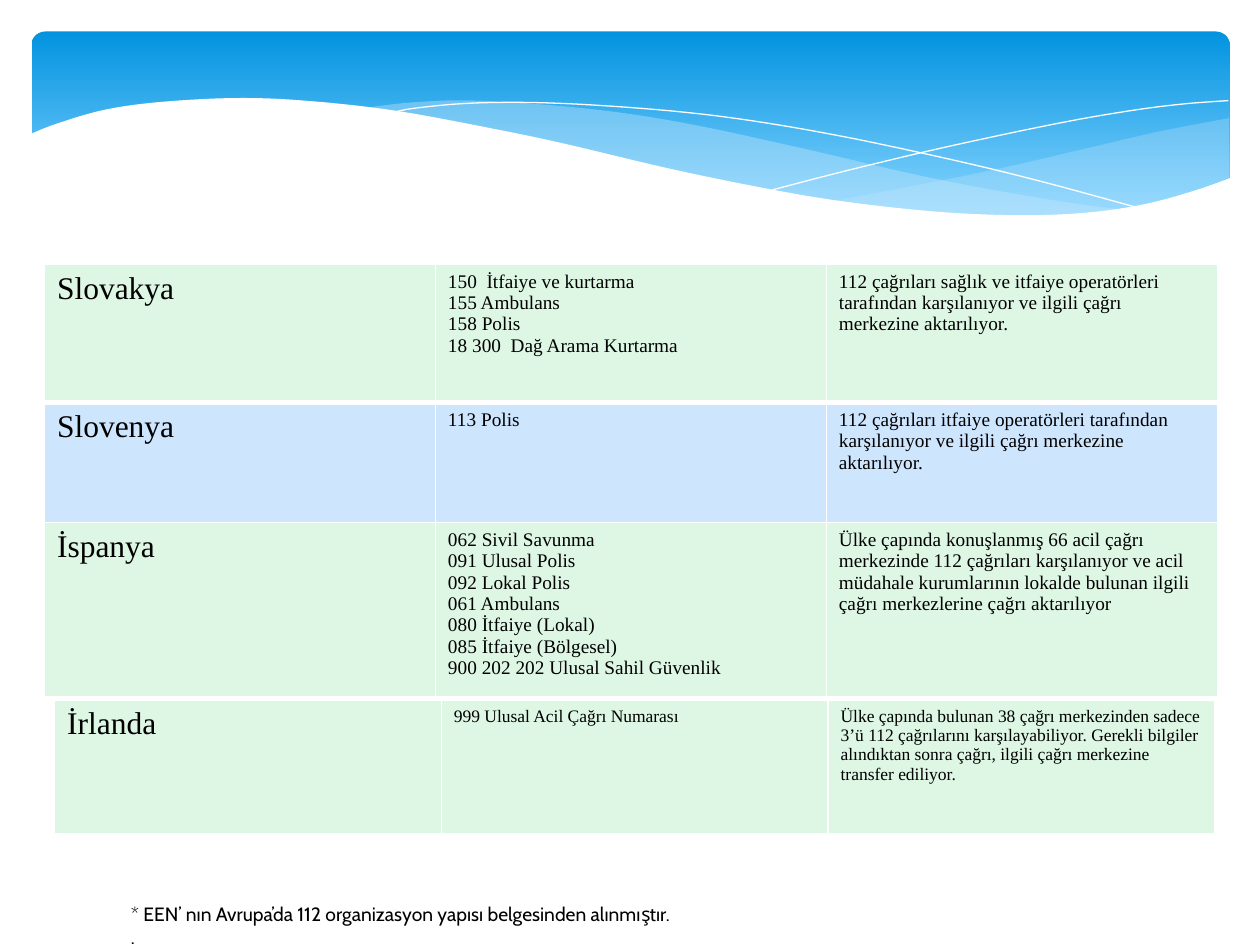
from dataclasses import dataclass
from typing import Optional

from lxml.etree import SubElement
from pptx import Presentation
from pptx.dml.color import RGBColor
from pptx.enum.shapes import MSO_SHAPE
from pptx.oxml.ns import qn
from pptx.util import Pt


@dataclass(frozen=True)
class Theme:
    sky_top: str = "0293E0"
    sky_bottom: str = "83D3FE"
    haze: str = "C6E7FC"
    white: str = "FFFFFF"
    text: str = "000000"
    green: str = "DEF6E4"
    blue: str = "CEE5FE"
    table_font: str = "Times New Roman"
    note_font: str = "Cabin"
    country_size: float = 18
    body_size: float = 11
    small_size: float = 10


@dataclass(frozen=True)
class Wave:
    edges: list[list[tuple[float, float]]]  # smooth edges, joined by straight lines
    fill: Optional[str] = None
    opacity: int = 100


@dataclass(frozen=True)
class Row:
    country: str
    numbers: list[str]
    routing: str
    height: float
    fill: str


@dataclass(frozen=True)
class CountryTable:
    left: float
    top: float
    column: float
    size: float
    rows: list[Row]


T = Theme()

# Banner waves, from back to front
WAVES = [
    Wave([[(702.5, 67.5), (663, 75), (620, 85), (561, 98.5), (476, 115)],
          [(476, 115), (497.5, 118), (527, 121), (570, 124), (607.5, 123),
           (640, 119.5), (673, 112.5), (702.5, 101.5)]], T.haze, 29),
    Wave([[(643, 120), (602.5, 114.5), (533.5, 102), (453, 83.5), (389.5, 70),
           (335, 62), (273.5, 57.5), (236, 58.5), (206, 62)],
          [(206, 62), (246, 67.5), (291, 76), (353.5, 90.5), (407.5, 103),
           (456.5, 112), (500, 119), (538.5, 122.5), (581, 124.5),
           (610.5, 124), (643, 120)]], T.haze, 40),
    Wave([[(222.5, 65), (236, 62), (269, 59), (312, 58.8), (367, 62), (419, 67.5),
           (479, 77.5), (547, 92), (598, 104.5), (653, 119.5)]]),
    Wave([[(441.5, 108.5), (484, 97.5), (538.5, 84.5), (602, 71), (644.5, 63.5),
           (675.5, 59.5), (702, 57.5)]]),
    Wave([[(16.5, 77), (33, 70.5), (61, 62.5), (95, 58), (139, 56), (180, 58),
           (227.5, 63.5), (281.5, 73.5), (322, 82), (381, 96), (434, 107),
           (481, 115), (535.5, 121), (582.5, 123), (621.5, 121.5),
           (655, 116.5), (684, 108.5), (703.5, 101.5)],
          [(703.5, 161), (16.5, 161)]], T.white),
]

TABLES = [
    CountryTable(25.4, 151.2, 223.4, T.body_size, [
        Row("Slovakya",
            ["150  İtfaiye ve kurtarma", "155 Ambulans", "158 Polis",
             "18 300  Dağ Arama Kurtarma"],
            "112 çağrıları sağlık ve itfaiye operatörleri tarafından karşılanıyor "
            "ve ilgili çağrı merkezine aktarılıyor.", 79, T.green),
        Row("Slovenya", ["113 Polis"],
            "112 çağrıları itfaiye operatörleri tarafından karşılanıyor "
            "ve ilgili çağrı merkezine aktarılıyor.", 68.5, T.blue),
        Row("İspanya",
            ["062 Sivil Savunma", "091 Ulusal Polis", "092 Lokal Polis",
             "061 Ambulans", "080 İtfaiye (Lokal)", "085 İtfaiye (Bölgesel)",
             "900 202 202 Ulusal Sahil Güvenlik"],
            "Ülke çapında konuşlanmış 66 acil çağrı merkezinde 112 çağrıları "
            "karşılanıyor ve acil müdahale kurumlarının lokalde bulunan ilgili "
            "çağrı merkezlerine çağrı aktarılıyor", 99.5, T.green),
    ]),
    CountryTable(31.2, 400.3, 221, T.small_size, [
        Row("İrlanda", ["999 Ulusal Acil Çağrı Numarası"],
            "Ülke çapında bulunan 38 çağrı merkezinden sadece 3’ü 112 çağrılarını "
            "karşılayabiliyor. Gerekli bilgiler alındıktan sonra çağrı, ilgili "
            "çağrı merkezine transfer ediliyor.", 77, T.green),
    ]),
]

NOTE = ["* EEN’ nın Avrupa’da 112 organizasyon yapısı belgesinden alınmıştır.", "."]


def rgb(color: str) -> RGBColor:
    return RGBColor.from_string(color)


def smooth(knots: list[tuple[float, float]], steps: int = 6) -> list[tuple[float, float]]:
    """Catmull-Rom curve through the knots."""
    if len(knots) < 3:
        return knots
    ends = [knots[0], *knots, knots[-1]]
    curve = [knots[0]]
    for a, b, c, d in zip(ends, ends[1:], ends[2:], ends[3:]):
        for i in range(1, steps + 1):
            t = i / steps
            curve.append(tuple(
                (2 * q + (r - p) * t + (2 * p - 5 * q + 4 * r - u) * t ** 2
                 + (3 * q - p - 3 * r + u) * t ** 3) / 2
                for p, q, r, u in zip(a, b, c, d)))
    return curve


def write(tf, lines: list[str], font: str, size: float) -> None:
    style = {"name": font, "size": Pt(size)}
    for i, line in enumerate(lines):
        p = tf.paragraphs[0] if i == 0 else tf.add_paragraph()
        r = p.add_run()
        r.text = line
        r.font.color.rgb = rgb(T.text)
        for name, value in style.items():
            setattr(r.font, name, value)


def draw_banner(s) -> None:
    sp = s.shapes.add_shape(MSO_SHAPE.ROUNDED_RECTANGLE, Pt(18), Pt(18), Pt(684.7), Pt(112.3))
    sp.adjustments[0] = 0.07
    sp.shadow.inherit = False
    sp.line.fill.background()
    sp.fill.gradient()
    sp.fill.gradient_angle = 270
    for stop, color, position in zip(sp.fill.gradient_stops, (T.sky_top, T.sky_bottom), (0, 0.9)):
        stop.color.rgb, stop.position = rgb(color), position


def draw_wave(s, wave: Wave) -> None:
    points = [(Pt(x), Pt(y)) for edge in wave.edges for x, y in smooth(edge)]
    builder = s.shapes.build_freeform(*points[0])
    builder.add_line_segments(points[1:], close=wave.fill is not None)
    sp = builder.convert_to_shape()
    sp.shadow.inherit = False
    if wave.fill is None:
        sp.fill.background()
        sp.line.color.rgb = rgb(T.white)
        sp.line.width = Pt(0)
        return
    sp.line.fill.background()
    sp.fill.solid()
    sp.fill.fore_color.rgb = rgb(wave.fill)
    if wave.opacity < 100:
        color = sp.fill._xPr.find(".//" + qn("a:srgbClr"))
        SubElement(color, qn("a:alpha"), val=str(wave.opacity * 1000))


def set_borders(cell, widths: dict[str, float]) -> None:
    tc_pr = cell._tc.get_or_add_tcPr()
    for i, (side, width) in enumerate(widths.items()):
        ln = SubElement(tc_pr, qn(f"a:{side}"), w=str(Pt(width)))
        SubElement(SubElement(ln, qn("a:solidFill")), qn("a:srgbClr"), val=T.white)
        tc_pr.insert(i, ln)  # borders come before the fill


def draw_table(s, spec: CountryTable) -> None:
    height = sum(row.height for row in spec.rows)
    table = s.shapes.add_table(len(spec.rows), 3, Pt(spec.left), Pt(spec.top),
                               Pt(3 * spec.column), Pt(height)).table
    table.first_row = table.horz_banding = False
    for column in table.columns:
        column.width = Pt(spec.column)
    for i, row in enumerate(spec.rows):
        table.rows[i].height = Pt(row.height)
        texts = [([row.country], T.country_size), (row.numbers, spec.size),
                 ([row.routing], spec.size)]
        for cell, (lines, size) in zip(table.rows[i].cells, texts):
            cell.fill.solid()
            cell.fill.fore_color.rgb = rgb(row.fill)
            set_borders(cell, {"lnL": 1, "lnR": 1, "lnT": 3 if i == 1 else 1,
                               "lnB": 3 if i == 0 else 1})
            write(cell.text_frame, lines, T.table_font, size)


def main() -> None:
    prs = Presentation()
    prs.slide_width, prs.slide_height = Pt(720), Pt(540)
    s = prs.slides.add_slide(prs.slide_layouts[6])

    # Banner
    draw_banner(s)
    for wave in WAVES:
        draw_wave(s, wave)

    # Source note
    tf = s.shapes.add_textbox(Pt(67.7), Pt(512), Pt(337), Pt(34)).text_frame
    tf.word_wrap = False
    write(tf, NOTE, T.note_font, T.body_size)

    # Country tables
    for spec in TABLES:
        draw_table(s, spec)

    prs.save("out.pptx")


if __name__ == "__main__":
    main()
